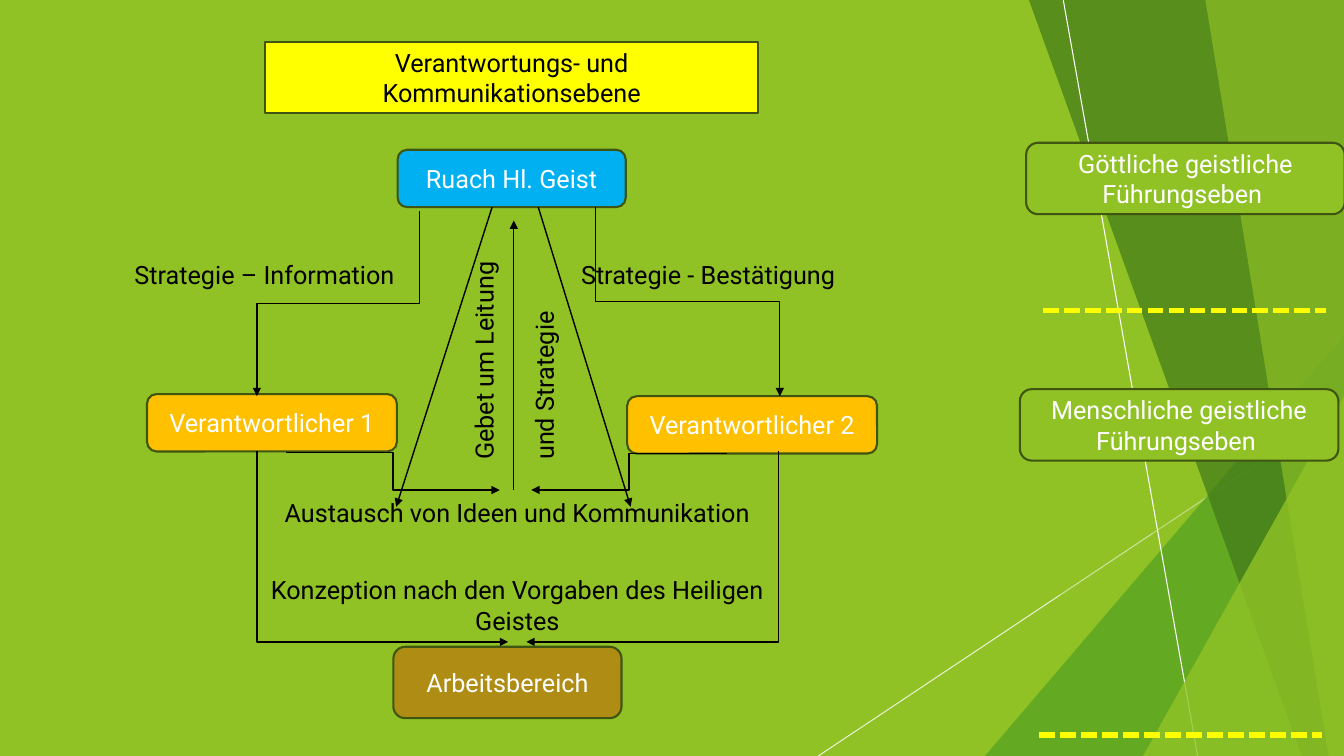
from dataclasses import dataclass

from lxml.etree import SubElement
from pptx import Presentation
from pptx.dml.color import RGBColor
from pptx.enum.dml import MSO_LINE
from pptx.enum.shapes import MSO_CONNECTOR, MSO_SHAPE
from pptx.enum.text import MSO_ANCHOR, MSO_AUTO_SIZE, PP_ALIGN
from pptx.oxml.ns import qn
from pptx.util import Pt


@dataclass(frozen=True)
class Theme:
    font: str = "Roboto"
    text_size: float = 18
    outline: float = 1.5
    arrow: float = 1
    hairline: float = 0.75
    divider: float = 3.75
    green: str = "90C226"
    mid_green: str = "54A021"
    dark_green: str = "3F7819"
    border: str = "3F5511"
    blue: str = "00B0F0"
    orange: str = "FFC000"
    brown: str = "AF8C14"
    yellow: str = "FFFF00"
    white: str = "FFFFFF"
    black: str = "000000"


@dataclass(frozen=True)
class Box:
    left: float
    top: float
    width: float
    height: float

    def inner(self, left, top, width, height):
        return Box(self.left + left, self.top + top, width, height)

    def point(self, x, y):
        return self.left + x, self.top + y

    def lengths(self):
        return Pt(self.left), Pt(self.top), Pt(self.width), Pt(self.height)


THEME = Theme()


def set_opacity(color_parent, percent):
    color = color_parent.find(".//" + qn("a:srgbClr"))
    SubElement(color, qn("a:alpha"), val=str(percent * 1000))


def paint(shape, color, opacity=100):
    shape.shadow.inherit = False
    shape.fill.solid()
    shape.fill.fore_color.rgb = RGBColor.from_string(color)
    shape.line.fill.background()
    if opacity < 100:
        set_opacity(shape._element.spPr, opacity)


def format_text(shape, color, align=PP_ALIGN.CENTER, anchor=MSO_ANCHOR.MIDDLE):
    frame = shape.text_frame
    frame.word_wrap = True
    frame.auto_size = MSO_AUTO_SIZE.NONE
    frame.vertical_anchor = anchor
    for paragraph in frame.paragraphs:
        paragraph.alignment = align
        for run in paragraph.runs:
            run.font.name = THEME.font
            run.font.size = Pt(THEME.text_size)
            run.font.color.rgb = RGBColor.from_string(color)


def style_card(shape, text, fill, color):
    paint(shape, fill)
    shape.line.color.rgb = RGBColor.from_string(THEME.border)
    shape.line.width = Pt(THEME.outline)
    shape.text_frame.text = text
    format_text(shape, color)


def add_card(slide, box, text, fill):
    shape = slide.shapes.add_shape(MSO_SHAPE.ROUNDED_RECTANGLE, *box.lengths())
    style_card(shape, text, fill, THEME.white)


def add_label(slide, box, text, align=PP_ALIGN.CENTER):
    label = slide.shapes.add_textbox(*box.lengths())
    label.text_frame.text = text
    format_text(label, THEME.black, align, MSO_ANCHOR.TOP)
    return label


def add_line(slide, start, end, color, width, kind=MSO_CONNECTOR.STRAIGHT, dash=None):
    connector = slide.shapes.add_connector(kind, *map(Pt, start + end))
    connector.line.color.rgb = RGBColor.from_string(color)
    connector.line.width = Pt(width)
    if dash:
        connector.line.dash_style = dash
    SubElement(connector._element.spPr, qn("a:effectLst"))
    return connector


def add_arrow(slide, start, end, kind=MSO_CONNECTOR.STRAIGHT):
    connector = add_line(slide, start, end, THEME.black, THEME.arrow, kind)
    outline = connector._element.spPr.find(qn("a:ln"))
    SubElement(outline, qn("a:tailEnd"), type="triangle")
    return connector


def add_sideways_elbow(slide, start, end, bend):
    """Arrow that leaves sideways and turns at the given share of its width."""
    connector = add_arrow(slide, start, end, MSO_CONNECTOR.ELBOW)
    geometry = connector._element.spPr.find(qn("a:prstGeom"))
    guides = geometry.find(qn("a:avLst"))
    SubElement(guides, qn("a:gd"), name="adj1", fmla=f"val {round(bend * 100000)}")


def add_downward_elbow(slide, start, end):
    """Arrow that leaves downward: a sideways elbow turned by 90 degrees."""
    center_x, center_y = (start[0] + end[0]) / 2, (start[1] + end[1]) / 2
    half_x, half_y = (end[0] - start[0]) / 2, (end[1] - start[1]) / 2
    connector = add_arrow(slide, (center_x - half_y, center_y + half_x),
                          (center_x + half_y, center_y - half_x), MSO_CONNECTOR.ELBOW)
    connector._element.spPr.find(qn("a:xfrm")).set("rot", str(90 * 60000))


def add_band(slide, box, top_x, bottom_x, color, opacity):
    """Slanted band reaching from the two given x positions to the right edge."""
    corners = [box.point(x, y) for x, y in (
        (top_x, 0), (box.width, 0), (box.width, box.height), (bottom_x, box.height))]
    builder = slide.shapes.build_freeform(*corners[0], scale=Pt(1))
    builder.add_line_segments(corners[1:], close=True)
    paint(builder.convert_to_shape(), color, opacity)


def add_corner_triangle(slide, box, left, top, color, opacity):
    area = box.inner(left, top, box.width - left, box.height - top)
    triangle = slide.shapes.add_shape(MSO_SHAPE.ISOSCELES_TRIANGLE, *area.lengths())
    triangle.adjustments[0] = 1
    paint(triangle, color, opacity)


def add_facets(slide, box):
    ray = add_line(slide, box.point(375.5, 290), box.point(0, 540),
                   THEME.white, THEME.hairline)
    set_opacity(ray._element.spPr, 80)
    add_band(slide, box, 299.5, 138.5, THEME.green, 30)
    add_band(slide, box, 171.5, 267.5, THEME.green, 20)
    add_corner_triangle(slide, box, 119, 240, THEME.mid_green, 72)
    add_band(slide, box, 150.5, 345, THEME.dark_green, 70)
    add_line(slide, box.point(175, 0), box.point(271, 540), THEME.white, THEME.hairline)
    add_band(slide, box, 276.5, 364.5, THEME.green, 65)
    add_corner_triangle(slide, box, 232, 283, THEME.green, 80)


def add_title(slide, box):
    title = slide.shapes.title
    title.left, title.top, title.width, title.height = box.lengths()
    geometry = SubElement(title._element.spPr, qn("a:prstGeom"), prst="roundRect")
    SubElement(geometry, qn("a:avLst"))
    style_card(title, "Verantwortungs- und Kommunikationsebene", THEME.yellow, THEME.black)


def add_responsibility_diagram(slide, box):
    for text, fill, area in (
        ("Ruach Hl. Geist", THEME.blue, (195, 0, 163, 41)),
        ("Arbeitsbereich", THEME.brown, (192, 355, 163, 51)),
        ("Verantwortlicher 1", THEME.orange, (16, 174.5, 178.5, 41)),
        ("Verantwortlicher 2", THEME.orange, (359, 176, 178.5, 41)),
    ):
        add_card(slide, box.inner(*area), text, fill)

    for start, end, bend in (
        ((430, 217), (290.5, 243), 0.5),
        ((115.5, 216), (268, 243), 0.5),
        ((94.5, 215.5), (274, 351.5), 0),
        ((467, 215.5), (287, 351.5), 0),
    ):
        add_sideways_elbow(slide, box.point(*start), box.point(*end), bend)
    for start, end in (((210.5, 43.5), (94.5, 176)), ((336.5, 41), (468, 176))):
        add_downward_elbow(slide, box.point(*start), box.point(*end))
    for start, end in (((278, 243), (278, 50.5)), ((295.5, 41), (361.5, 255)),
                       ((262.5, 41), (194, 255))):
        add_arrow(slide, box.point(*start), box.point(*end))

    add_label(slide, box.inner(94.5, 245, 372, 29), "Austausch von Ideen und Kommunikation")
    add_label(slide, box.inner(94.5, 300, 372, 51),
              "Konzeption nach den Vorgaben des Heiligen Geistes")
    add_label(slide, box.inner(0, 74.5, 210, 29), "Strategie – Information", PP_ALIGN.LEFT)
    add_label(slide, box.inner(319, 74.5, 210, 29), "Strategie - Bestätigung", PP_ALIGN.LEFT)
    prayer = add_label(slide, box.inner(190.5, 104.5, 175.5, 72.5),
                       "Gebet um Leitung\nund Strategie", PP_ALIGN.LEFT)
    prayer.rotation = 270
    prayer.text_frame.paragraphs[1].space_before = Pt(21.5)


def add_leadership_levels(slide, box):
    for text, left, top in (("Göttliche geistliche Führungseben ", 4.5, 0),
                            ("Menschliche geistliche Führungseben ", 0, 176)):
        add_card(slide, box.inner(left, top, 227.5, 51), text, THEME.green)
    for left, top in ((16.5, 120), (14, 423)):
        add_line(slide, box.point(left, top), box.point(left + 202, top),
                 THEME.yellow, THEME.divider, dash=MSO_LINE.SQUARE_DOT)


def main():
    presentation = Presentation()
    presentation.slide_width, presentation.slide_height = Pt(960), Pt(540)
    slide = presentation.slides.add_slide(presentation.slide_layouts[5])
    slide.background.fill.solid()
    slide.background.fill.fore_color.rgb = RGBColor.from_string(THEME.green)
    add_facets(slide, Box(584.5, 0, 375.5, 540))
    add_title(slide, Box(189.5, 30, 352, 51))
    add_responsibility_diagram(slide, Box(89, 107, 568, 406))
    add_leadership_levels(slide, Box(728.5, 102, 231.5, 425))
    presentation.save("out.pptx")


if __name__ == "__main__":
    main()
